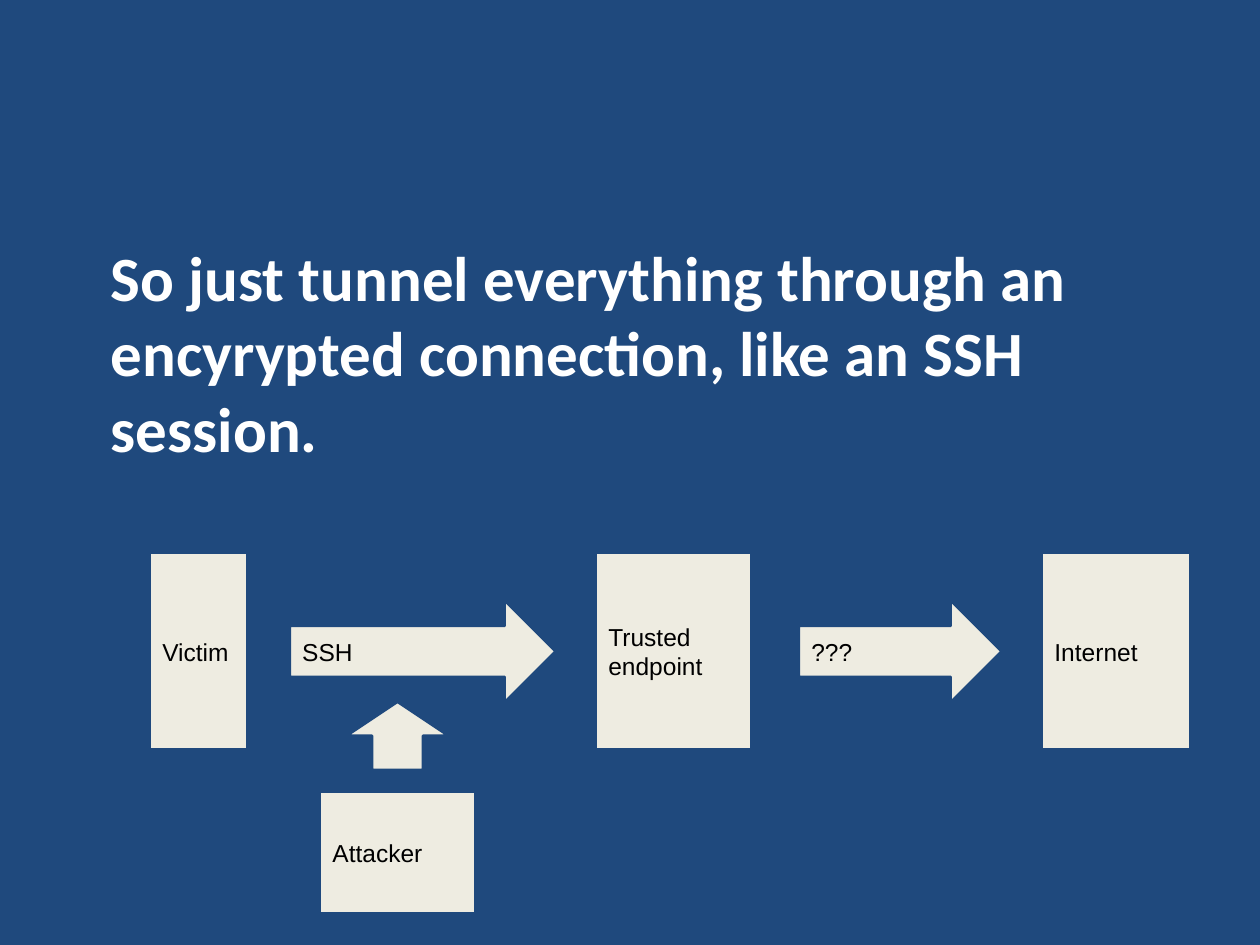
from pptx import Presentation
from pptx.dml.color import RGBColor
from pptx.enum.shapes import MSO_SHAPE
from pptx.enum.text import MSO_ANCHOR, MSO_AUTO_SIZE, PP_ALIGN
from pptx.util import Inches, Pt

NAVY = "1F497D"
CREAM = "EEECE1"
WHITE = "FFFFFF"
BLACK = "000000"


def paint(color_format, value):
    """Set a colour from a hex string."""
    color_format.rgb = RGBColor.from_string(value)


def fill_solid(fill, value):
    """Make a fill solid in the given colour."""
    fill.solid()
    paint(fill.fore_color, value)


def write(frame, text, font_name, size, color, bold=False):
    """Write one left-aligned run into a text frame."""
    frame.word_wrap = True
    para = frame.paragraphs[0]
    para.alignment = PP_ALIGN.LEFT
    span = para.add_run()
    span.text = text
    span.font.name = font_name
    span.font.size = Pt(size)
    span.font.bold = bold
    paint(span.font.color, color)


def set_title(page, text):
    """Place and fill the title placeholder."""
    title = page.shapes.title
    title.left, title.top = Inches(0.78), Inches(1.84)
    title.width, title.height = Inches(8.67), Inches(1.4)
    frame = title.text_frame
    frame.auto_size = MSO_AUTO_SIZE.NONE
    frame.vertical_anchor = MSO_ANCHOR.TOP
    write(frame, text, "Calibri", 36, WHITE, bold=True)


def add_block(page, kind, left, top, width, height, label=""):
    """Add a cream shape with an optional label."""
    block = page.shapes.add_shape(
        kind, Inches(left), Inches(top), Inches(width), Inches(height))
    block.shadow.inherit = False
    fill_solid(block.fill, CREAM)
    paint(block.line.color, NAVY)
    block.line.width = Pt(1.5)
    if label:
        frame = block.text_frame
        frame.vertical_anchor = MSO_ANCHOR.MIDDLE
        frame.margin_left = frame.margin_right = Inches(0.1)
        frame.margin_top = frame.margin_bottom = Inches(0.1)
        write(frame, label, "Arial", 14, BLACK)


def add_route(page):
    """Add the row of hosts and the arrows between them."""
    middle = 5.17
    heights = {MSO_SHAPE.RECTANGLE: 1.56, MSO_SHAPE.RIGHT_ARROW: 0.81}
    steps = [
        (MSO_SHAPE.RECTANGLE, 1.19, 0.77, "Victim"),
        (MSO_SHAPE.RIGHT_ARROW, 2.3, 2.11, "SSH"),
        (MSO_SHAPE.RECTANGLE, 4.73, 1.23, "Trusted endpoint"),
        (MSO_SHAPE.RIGHT_ARROW, 6.34, 1.61, "???"),
        (MSO_SHAPE.RECTANGLE, 8.27, 1.18, "Internet"),
    ]
    for kind, left, width, label in steps:
        height = heights[kind]
        add_block(page, kind, left, middle - height / 2, width, height, label)


def add_attacker(page):
    """Add the attacker and the arrow up to the tunnel."""
    add_block(page, MSO_SHAPE.RECTANGLE, 2.54, 6.28, 1.23, 0.97, "Attacker")
    add_block(page, MSO_SHAPE.UP_ARROW, 2.75, 5.57, 0.81, 0.54)


def main():
    """Build the slide and save it."""
    deck = Presentation()
    deck.slide_width, deck.slide_height = Inches(10), Inches(7.5)
    page = deck.slides.add_slide(deck.slide_layouts[5])
    fill_solid(page.background.fill, NAVY)
    set_title(page, "So just tunnel everything through an encyrypted "
                    "connection, like an SSH session.")
    add_route(page)
    add_attacker(page)
    deck.save("out.pptx")


if __name__ == "__main__":
    main()
